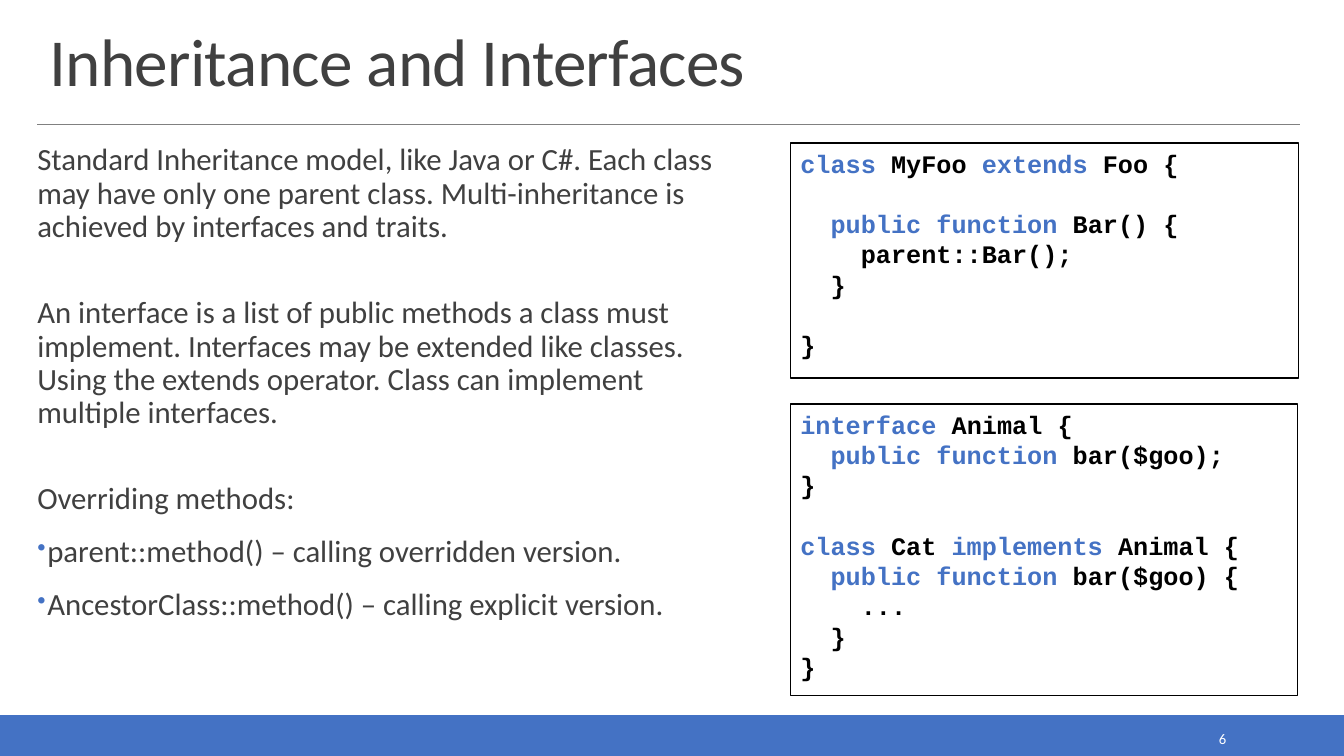
from lxml.etree import SubElement
from pptx import Presentation
from pptx.dml.color import RGBColor
from pptx.enum.shapes import MSO_CONNECTOR, MSO_SHAPE
from pptx.enum.text import MSO_ANCHOR, PP_ALIGN
from pptx.oxml.ns import qn
from pptx.util import Inches, Pt

BLUE = RGBColor(0x44, 0x72, 0xC4)
DARK = RGBColor(0x40, 0x40, 0x40)
GRAY = RGBColor(0x80, 0x80, 0x80)
BLACK = RGBColor(0, 0, 0)
WHITE = RGBColor(255, 255, 255)
CODE_LINE = Pt(21.6)
CODE_INDENT = Inches(0.15)  # width of one code character


def add_text_box(left, top, width, height, anchor):
    shape = slide.shapes.add_textbox(Inches(left), Inches(top), Inches(width), Inches(height))
    shape.text_frame.word_wrap = True
    shape.text_frame.vertical_anchor = anchor
    return shape.text_frame


def set_font(font, name, size, color):
    font.name = name
    font.size = Pt(size)
    font.color.rgb = color


presentation = Presentation()
presentation.slide_width = Inches(13.33)
presentation.slide_height = Inches(7.5)
slide = presentation.slides.add_slide(presentation.slide_layouts[6])

# Footer bar
footer = slide.shapes.add_shape(MSO_SHAPE.RECTANGLE, 0, Inches(7.1), Inches(13.33), Inches(0.4))
footer.shadow.inherit = False
footer.fill.solid()
footer.fill.fore_color.rgb = BLUE
footer.line.color.rgb = BLUE
footer.line.width = Pt(1.25)

# Rule under the title
rule = slide.shapes.add_connector(
    MSO_CONNECTOR.STRAIGHT, Inches(0.37), Inches(1.23), Inches(12.89), Inches(1.23))
rule.line.color.rgb = GRAY
rule.line.width = Pt(0.5)
SubElement(rule._element.spPr, qn("a:effectLst"))

# Title
paragraph = add_text_box(0.39, 0.2, 12.52, 0.84, MSO_ANCHOR.BOTTOM).paragraphs[0]
run = paragraph.add_run()
run.text = "Inheritance and Interfaces"
paragraph.line_spacing = 0.85
set_font(run.font, "Calibri", 48, DARK)
run.font._element.set("spc", "-50")

# Explanation: text, space before in points, bulleted
body_lines = [
    ("Standard Inheritance model, like Java or C#. Each class may have only one parent class. "
     "Multi-inheritance is achieved by interfaces and traits.", 12, False),
    ("An interface is a list of public methods a class must implement. Interfaces may be extended "
     "like classes. Using the extends operator. Class can implement multiple interfaces.", 36, False),
    ("Overriding methods:", 36, False),
    ("parent::method() – calling overridden version.", 12, True),
    ("AncestorClass::method() – calling explicit version.", 12, True),
]
body = add_text_box(0.37, 1.39, 6.93, 5.51, MSO_ANCHOR.TOP)
body.margin_left = body.margin_right = 0
body.margin_top = body.margin_bottom = Inches(0.04)
for index, (text, space_before, bulleted) in enumerate(body_lines):
    paragraph = body.add_paragraph() if index else body.paragraphs[0]
    paragraph.text = text
    paragraph.line_spacing = 0.9
    paragraph.space_before = Pt(space_before)
    paragraph.space_after = Pt(2)
    set_font(paragraph.font, "Calibri", 22, DARK)
    if bulleted:
        properties = paragraph._p.get_or_add_pPr()
        properties.set("marL", str(Inches(0.1)))
        properties.set("indent", str(Inches(-0.1)))
        bullet_font = properties.find(qn("a:defRPr"))
        bullet_color = SubElement(properties, qn("a:buClr"))
        SubElement(bullet_color, qn("a:srgbClr"), val=str(BLUE))
        SubElement(properties, qn("a:buSzPct"), val="80000")
        SubElement(properties, qn("a:buChar"), char="•")
        properties.append(bullet_font)  # the schema wants the font last

# Code boxes: keywords stand between bars
code_boxes = [
    (1.42, 5.04, 2.33, """|class| MyFoo |extends| Foo {

  |public function| Bar() {
    parent::Bar();
  }

}"""),
    (4.01, 5.03, 2.89, """|interface| Animal {
  |public function| bar($goo);
}

|class| Cat |implements| Animal {
  |public function| bar($goo) {
    ...
  }
}"""),
]
for top, width, height, code in code_boxes:
    box = slide.shapes.add_shape(
        MSO_SHAPE.RECTANGLE, Inches(7.84), Inches(top), Inches(width), Inches(height))
    box.shadow.inherit = False
    box.fill.background()
    box.line.color.rgb = BLACK
    box.line.width = Pt(1.25)
    frame = box.text_frame
    frame.word_wrap = True
    frame.vertical_anchor = MSO_ANCHOR.TOP
    paragraph = frame.paragraphs[0]
    after_gap = False
    for number, line in enumerate(code.splitlines()):
        if not line:
            after_gap = True
            continue
        if number:
            paragraph = frame.add_paragraph()
        statement = line.lstrip()
        depth = len(line) - len(statement)
        paragraph.alignment = PP_ALIGN.LEFT
        paragraph.line_spacing = CODE_LINE
        paragraph.space_before = CODE_LINE if after_gap else Pt(0)
        paragraph._p.get_or_add_pPr().set("marL", str(depth * CODE_INDENT))
        after_gap = False
        for position, part in enumerate(statement.split("|")):
            if part:
                run = paragraph.add_run()
                run.text = part
                set_font(run.font, "Courier New", 18, BLUE if position % 2 else BLACK)
                run.font.bold = True

# Slide number
paragraph = add_text_box(10.83, 7.19, 1.43, 0.28, MSO_ANCHOR.MIDDLE).paragraphs[0]
paragraph.text = "6"
paragraph.alignment = PP_ALIGN.RIGHT
set_font(paragraph.font, "Calibri", 10.5, WHITE)

presentation.save("out.pptx")
